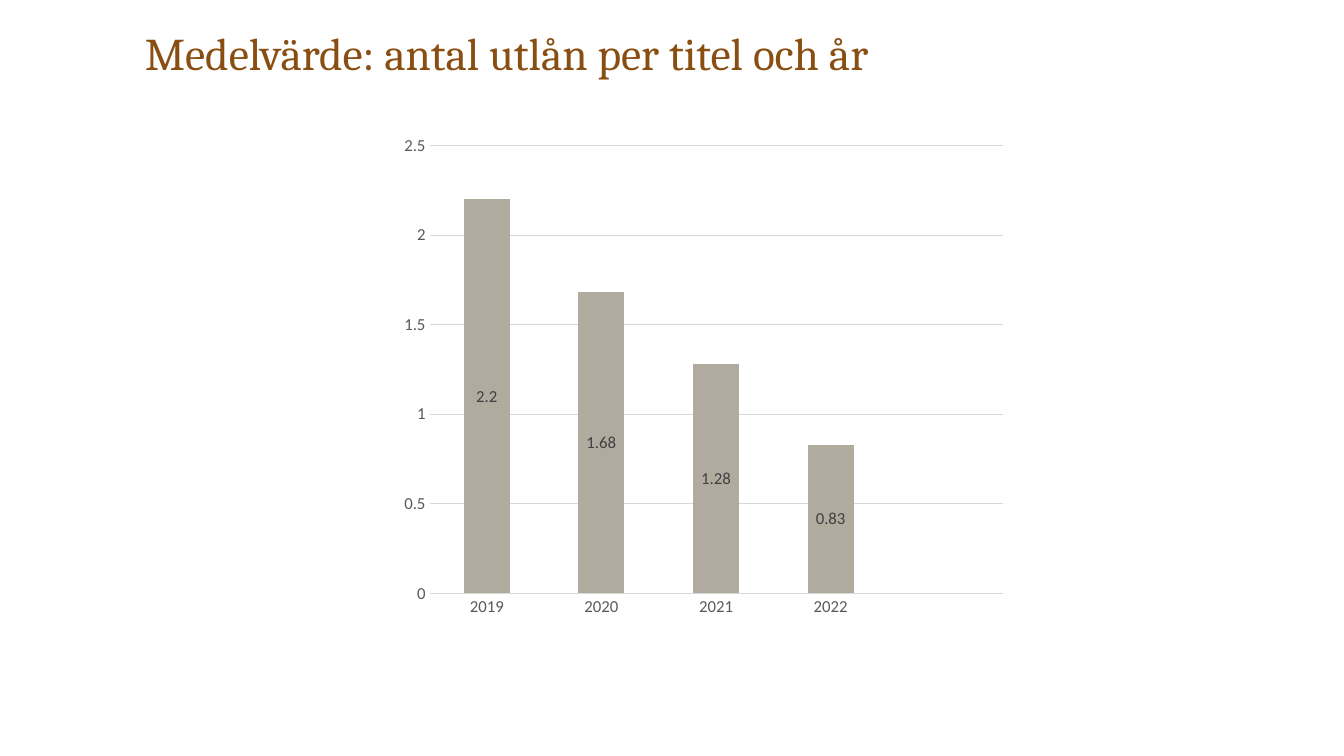
from lxml import etree
from pptx import Presentation
from pptx.chart.data import CategoryChartData
from pptx.dml.color import RGBColor
from pptx.enum import chart as kinds, text
from pptx.oxml.ns import qn
from pptx.util import Pt

PX = 914400 / 100.8
BROWN = RGBColor(0x89, 0x4E, 0x11)
SAND = RGBColor(0xB1, 0xAA, 0x9F)
GRID = RGBColor(0xD9, 0xD9, 0xD9)
GREY = RGBColor(0x59, 0x59, 0x59)
DARK = RGBColor(0x40, 0x40, 0x40)
YEARS = ["2019", "2020", "2021", "2022", ""]
LOANS = [2.2, 1.68, 1.28, 0.83, None]
PLOT = {"x": 0.08, "y": 0.1, "w": 0.89, "h": 0.82}


def px(*sizes):
    """Turn whole pixels into EMU."""
    return [round(size * PX) for size in sizes]


def style(font, size, color, name="Calibri"):
    """Set the size, colour and face of a font."""
    font.size, font.name = Pt(size), name
    font.color.rgb = color


def write(slide, words, box, *, size, color, name):
    """Add a text box without margins."""
    frame = slide.shapes.add_textbox(*px(*box)).text_frame
    frame.word_wrap = True
    frame.vertical_anchor = text.MSO_ANCHOR.MIDDLE
    frame.margin_left = frame.margin_right = 0
    frame.margin_top = frame.margin_bottom = 0
    run = frame.paragraphs[0].add_run()
    run.text = words
    style(run.font, size, color, name)


def rule(line):
    """Give a chart line the light grid look."""
    line.color.rgb = GRID
    line.width = Pt(0.75)


def place(chart):
    """Fix the inner plot area as shares of the chart."""
    area = chart._chartSpace.chart.plotArea
    for old in area.findall(qn("c:layout")):
        area.remove(old)
    layout = etree.Element(qn("c:layout"))
    area.insert(0, layout)
    manual = etree.SubElement(layout, qn("c:manualLayout"))
    parts = {"layoutTarget": "inner", "xMode": "edge", "yMode": "edge", **PLOT}
    for tag, val in parts.items():
        etree.SubElement(manual, qn("c:" + tag)).set("val", str(val))


def columns(slide, box):
    """Add the column chart of loans per year."""
    data = CategoryChartData()
    data.categories = YEARS
    data.add_series("Series 1", LOANS)
    kind = kinds.XL_CHART_TYPE.COLUMN_STACKED
    chart = slide.shapes.add_chart(kind, *px(*box), data).chart
    chart.has_legend = chart.has_title = False
    style(chart.font, 12, GREY)
    for axis in (chart.category_axis, chart.value_axis):
        axis.major_tick_mark = axis.minor_tick_mark = kinds.XL_TICK_MARK.NONE
        style(axis.tick_labels.font, 12, GREY)
    rule(chart.category_axis.format.line)
    axis = chart.value_axis
    axis.format.line.fill.background()
    axis.minimum_scale, axis.maximum_scale, axis.major_unit = 0, 2.5, 0.5
    rule(axis.major_gridlines.format.line)
    plot = chart.plots[0]
    plot.gap_width, plot.overlap, plot.vary_by_categories = 150, 100, False
    bars = plot.series[0]
    bars.format.fill.solid()
    bars.format.fill.fore_color.rgb = SAND
    labels = bars.data_labels
    labels.show_value = True
    labels.position = kinds.XL_LABEL_POSITION.CENTER
    style(labels.font, 12, DARK)
    place(chart)


def main():
    """Build and save the slide."""
    deck = Presentation()
    deck.slide_width, deck.slide_height = px(1344, 756)
    slide = deck.slides.add_slide(deck.slide_layouts[6])
    write(slide, "Medelvärde: antal utlån per titel och år", (145, 21, 1053, 62),
          size=32.4, color=BROWN, name="Cambria")
    columns(slide, (378, 91, 644, 546))
    deck.save("out.pptx")


main()
